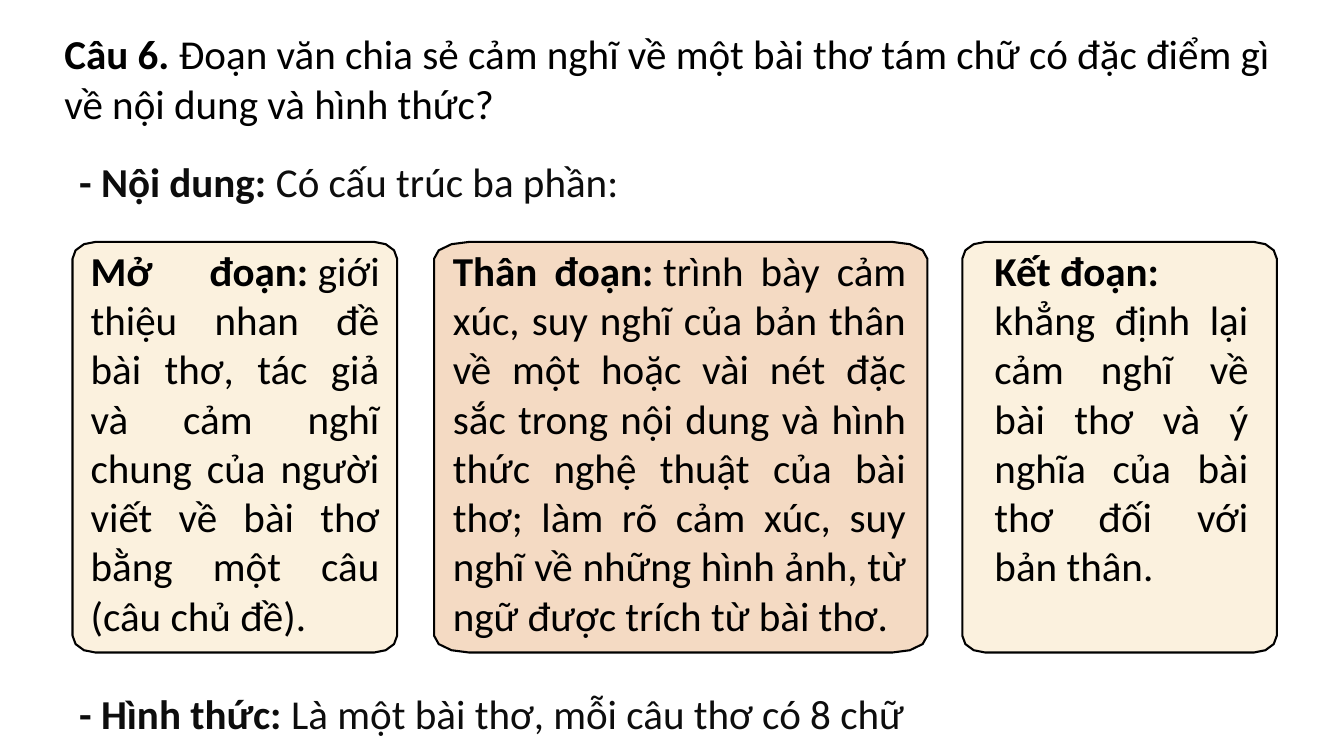
import math
from typing import NamedTuple

from pptx import Presentation
from pptx.dml.color import RGBColor
from pptx.enum.text import MSO_ANCHOR, PP_ALIGN
from pptx.util import Pt

PX = 9144  # 100 px to the inch
LEFT, JUSTIFY = PP_ALIGN.LEFT, PP_ALIGN.JUSTIFY
TOP = MSO_ANCHOR.TOP
FONT, FONT_SIZE = "Calibri", 44
FIXED_SPACE = chr(160)  # not stretched when a line is justified
COLORS = {
    "black": "000000",
    "charcoal": "0D0D0D",
    "cream": "FBF1DE",
    "peach": "F4DAC3",
}
CARD_TOP, CARD_HEIGHT, CORNER_HEIGHT = 360, 611, 25
CORNER_STEPS = 3


class Run(NamedTuple):
    text: str
    bold: bool = False


Paragraphs = list[list[Run]]


class Card(NamedTuple):
    left: int
    width: int
    corner_width: int
    fill: str
    text_left: int
    text_width: int
    text_height: int
    paragraphs: Paragraphs


class Line(NamedTuple):
    left: int
    top: int
    width: int
    height: int
    color: str
    runs: list[Run]


CARDS = [
    Card(108, 483, 34, "cream", 125, 450, 528, [[
        Run("Mở đoạn:", True),
        Run(FIXED_SPACE + "giới thiệu nhan đề bài thơ, tác giả và cảm nghĩ chung "
            "của người viết về bài thơ bằng một câu (câu chủ đề)."),
    ]]),
    Card(646, 734, 52, "peach", 664, 695, 602, [[
        Run("Thân đoạn:", True),
        Run(FIXED_SPACE + "trình bày cảm xúc, suy nghĩ của bản thân về một hoặc vài "
            "nét đặc sắc trong nội dung và hình thức nghệ thuật của bài thơ; làm rõ "
            "cảm xúc, suy nghĩ về những hình ảnh, từ ngữ được trích từ bài thơ."),
    ]]),
    Card(1432, 468, 34, "cream", 1470, 398, 528, [
        [Run("Kết đoạn:", True)],
        [Run("khẳng định lại cảm nghĩ về bài thơ và ý nghĩa của bài thơ đối với "
             "bản thân.")],
    ]),
]
LINES = [
    Line(86, 38, 1850, 158, "black", [
        Run("Câu 6." + FIXED_SPACE, True),
        Run("Đoạn văn chia sẻ cảm nghĩ về một bài thơ tám chữ có đặc điểm gì về "
            "nội dung và hình thức?"),
    ]),
    Line(108, 228, 1000, 84, "charcoal",
         [Run("- Nội dung: ", True), Run("Có cấu trúc ba phần:")]),
    Line(108, 1020, 1465, 84, "charcoal",
         [Run("- Hình thức: ", True), Run("Là một bài thơ, mỗi câu thơ có 8 chữ")]),
]


def add_text(slide, paragraphs: Paragraphs, *, left: int, top: int, width: int,
             height: int, color: str = "black", align=LEFT) -> None:
    box = slide.shapes.add_textbox(left * PX, top * PX, width * PX, height * PX)
    frame = box.text_frame
    frame.word_wrap = True
    frame.vertical_anchor = TOP
    for index, runs in enumerate(paragraphs):
        paragraph = frame.add_paragraph() if index else frame.paragraphs[0]
        paragraph.alignment = align
        for part in runs:
            run = paragraph.add_run()
            run.text = part.text
            run.font.name = FONT
            run.font.size = Pt(FONT_SIZE)
            run.font.bold = part.bold
            run.font.color.rgb = RGBColor.from_string(COLORS[color])


def card_outline(card: Card) -> list[tuple[int, int]]:
    """Points, in EMU, of a rectangle with elliptical corners, clockwise from the left."""
    x_near, x_far = card.left + card.corner_width, card.left + card.width - card.corner_width
    y_near, y_far = CARD_TOP + CORNER_HEIGHT, CARD_TOP + CARD_HEIGHT - CORNER_HEIGHT
    centers = [(x_near, y_near), (x_far, y_near), (x_far, y_far), (x_near, y_far)]
    points = []
    for quarter, (x, y) in enumerate(centers):
        for step in range(CORNER_STEPS + 1):
            angle = math.pi + (quarter + step / CORNER_STEPS) * math.pi / 2
            points.append((round((x + card.corner_width * math.cos(angle)) * PX),
                           round((y + CORNER_HEIGHT * math.sin(angle)) * PX)))
    return points


def add_card(slide, card: Card) -> None:
    start, *rest = card_outline(card)
    builder = slide.shapes.build_freeform(*start)
    builder.add_line_segments(rest, close=True)
    shape = builder.convert_to_shape()
    shape.shadow.inherit = False
    shape.fill.solid()
    shape.fill.fore_color.rgb = RGBColor.from_string(COLORS[card.fill])
    shape.line.color.rgb = RGBColor.from_string(COLORS["black"])
    shape.line.width = Pt(2.25)
    add_text(slide, card.paragraphs, left=card.text_left, top=CARD_TOP,
             width=card.text_width, height=card.text_height, align=JUSTIFY)


def main() -> None:
    presentation = Presentation()
    presentation.slide_width = 2000 * PX
    presentation.slide_height = 1125 * PX
    slide = presentation.slides.add_slide(presentation.slide_layouts[6])
    for card in CARDS:
        add_card(slide, card)
    for line in LINES:
        add_text(slide, [line.runs], left=line.left, top=line.top, width=line.width,
                 height=line.height, color=line.color)
    presentation.save("out.pptx")


if __name__ == "__main__":
    main()
